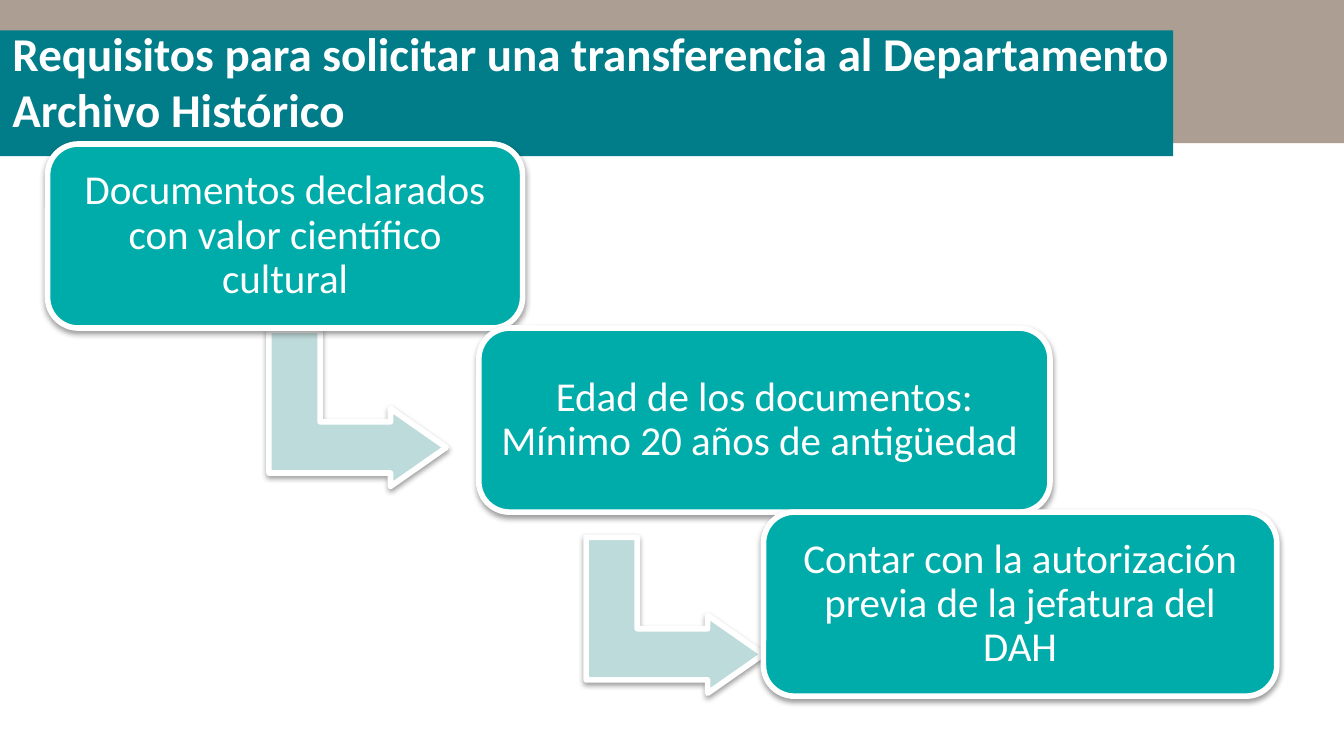
from dataclasses import dataclass

from lxml import etree
from pptx import Presentation
from pptx.dml.color import RGBColor as Rgb
from pptx.enum import shapes, text
from pptx.oxml import ns
from pptx.util import Pt


@dataclass(frozen=True)
class Theme:
    """Colours, font and sizes of the slide."""
    sand: str = "AD9E93"
    teal: str = "007D89"
    aqua: str = "00ACA9"
    mist: str = "BDDBDA"
    white: str = "FFFFFF"
    font: str = "Calibri"
    head: float = 25.2
    body: float = 22
    edge: float = 3


THEME = Theme()
KIND = shapes.MSO_SHAPE


def place(slide, kind, box, fill):
    """Add a plain filled shape."""
    shape = slide.shapes.add_shape(kind, *map(Pt, box))
    shape.shadow.inherit = False
    shape.fill.solid()
    shape.fill.fore_color.rgb = Rgb.from_string(fill)
    shape.line.fill.background()
    return shape


def raised(slide, kind, box, fill, bends):
    """Add a shape with a white edge and a soft shadow below it."""
    shape = place(slide, kind, box, fill)
    for i, bend in enumerate(bends):
        shape.adjustments[i] = bend
    shape.line.color.rgb = Rgb.from_string(THEME.white)
    shape.line.width = Pt(THEME.edge)
    glow = shape.element.spPr.find(ns.qn("a:effectLst"))
    cast = etree.SubElement(glow, ns.qn("a:outerShdw"), blurRad=str(Pt(3.1)),
                            dist=str(Pt(1.6)), dir="5400000", rotWithShape="0")
    tint = etree.SubElement(cast, ns.qn("a:srgbClr"), val="000000")
    etree.SubElement(tint, ns.qn("a:alpha"), val="38000")
    return shape


def write(para, words, size, bold=False):
    """Add one run in the theme font."""
    run = para.add_run()
    run.text = words
    run.font.name = THEME.font
    run.font.size = Pt(size)
    run.font.bold = bold
    run.font.color.rgb = Rgb.from_string(THEME.white)


def header(slide, box, words):
    """Place the two bands and the title in the box."""
    left, top, width, height = box
    place(slide, KIND.RECTANGLE, box, THEME.sand)
    place(slide, KIND.RECTANGLE, (left, top + 16.25, 628.5, 67.5), THEME.teal)
    title = slide.shapes.title
    slide.shapes.element.append(title.element)
    title.left, title.top = Pt(left - 0.5), Pt(top + 9.5)
    title.width, title.height = Pt(648), Pt(67.5)
    frame = title.text_frame
    frame.word_wrap = True
    frame.auto_size = text.MSO_AUTO_SIZE.NONE
    frame.vertical_anchor = text.MSO_ANCHOR.MIDDLE
    para = frame.paragraphs[0]
    para.alignment = text.PP_ALIGN.LEFT
    write(para, words, THEME.head, True)


def step(slide, box, words):
    """Place one rounded step with centred text."""
    card = raised(slide, KIND.ROUNDED_RECTANGLE, box, THEME.aqua, [0.167])
    frame = card.text_frame
    frame.word_wrap = True
    frame.vertical_anchor = text.MSO_ANCHOR.MIDDLE
    frame.margin_left = frame.margin_right = Pt(6.6)
    frame.margin_top = frame.margin_bottom = Pt(6.6)
    para = frame.paragraphs[0]
    para.alignment = text.PP_ALIGN.CENTER
    para.line_spacing = 0.9
    write(para, words, THEME.body)


def arrow(slide, box):
    """Place one bent arrow that turns right."""
    bend = raised(slide, KIND.BENT_UP_ARROW, box, THEME.mist,
                  [0.328, 0.25, 0.358])
    bend.rotation = 90


def stairs(slide, box, steps, bends):
    """Place the steps downwards, each with the arrow that leaves it."""
    left, top, width, height = box
    rise = 98.6
    tall = height - rise * (len(steps) - 1)
    for i, (shift, wide, words) in enumerate(steps):
        if i < len(bends):
            over, down = bends[i]
            arrow(slide, (left + over, top + down, 83.5, 95))
        step(slide, (left + shift, top + i * rise, wide, tall), words)


def main():
    """Build and save the slide."""
    deck = Presentation()
    deck.slide_width, deck.slide_height = Pt(720), Pt(405)
    slide = deck.slides.add_slide(deck.slide_layouts[5])
    header(slide, (0, 0, 720, 76.75),
           "Requisitos para solicitar una transferencia al Departamento "
           "Archivo Histórico")
    steps = [
        (0, 254.5, "Documentos declarados con valor científico cultural"),
        (231, 306, "Edad de los documentos: Mínimo 20 años de antigüedad "),
        (383.5, 275, "Contar con la autorización previa de la jefatura del DAH"),
    ]
    stairs(slide, (25.5, 77.2, 658.5, 295.8), steps,
           [(124.3, 94.2), (294.2, 205)])
    deck.save("out.pptx")


if __name__ == "__main__":
    main()
